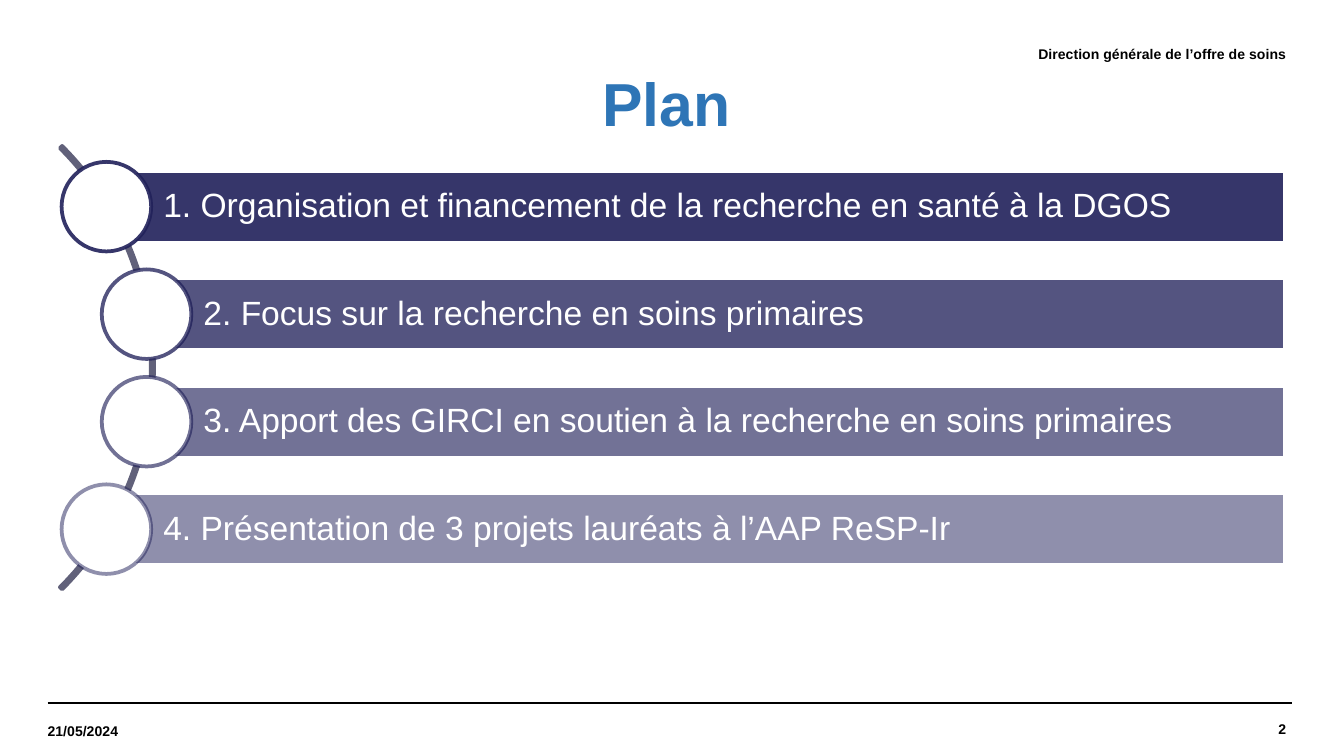
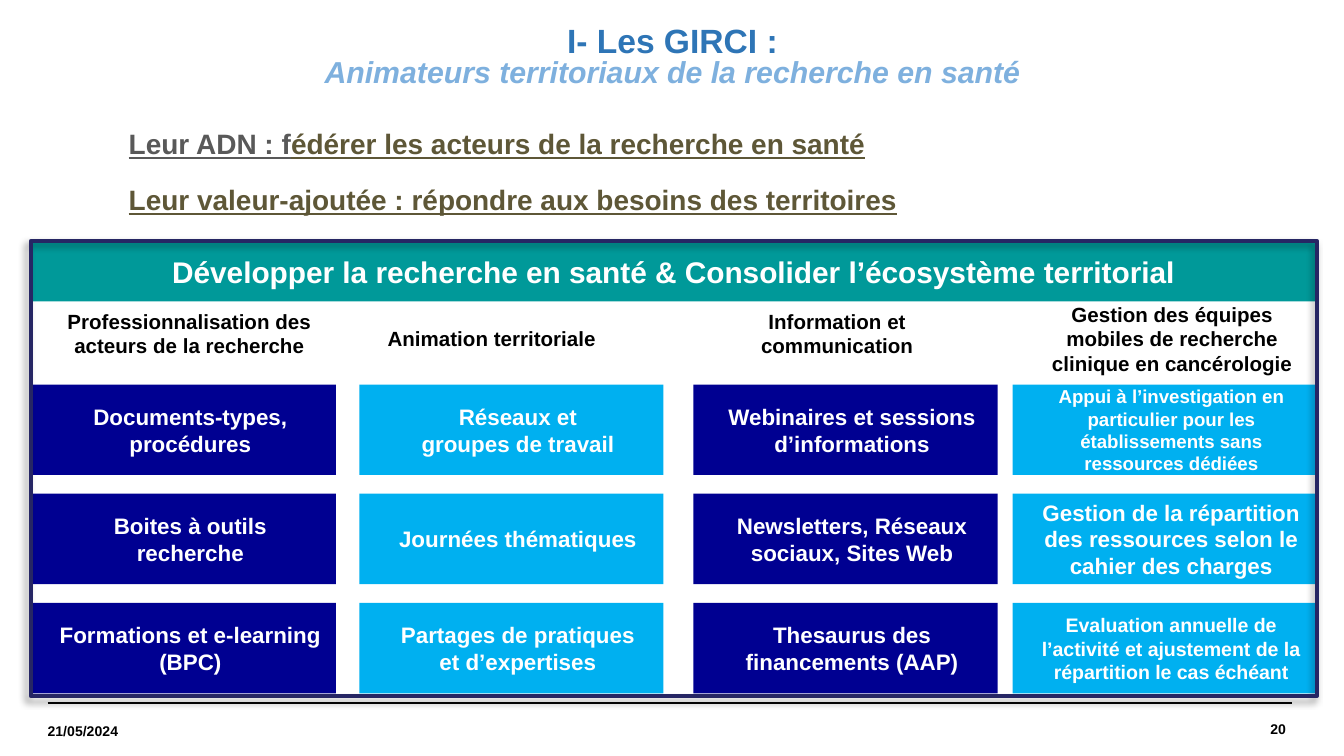
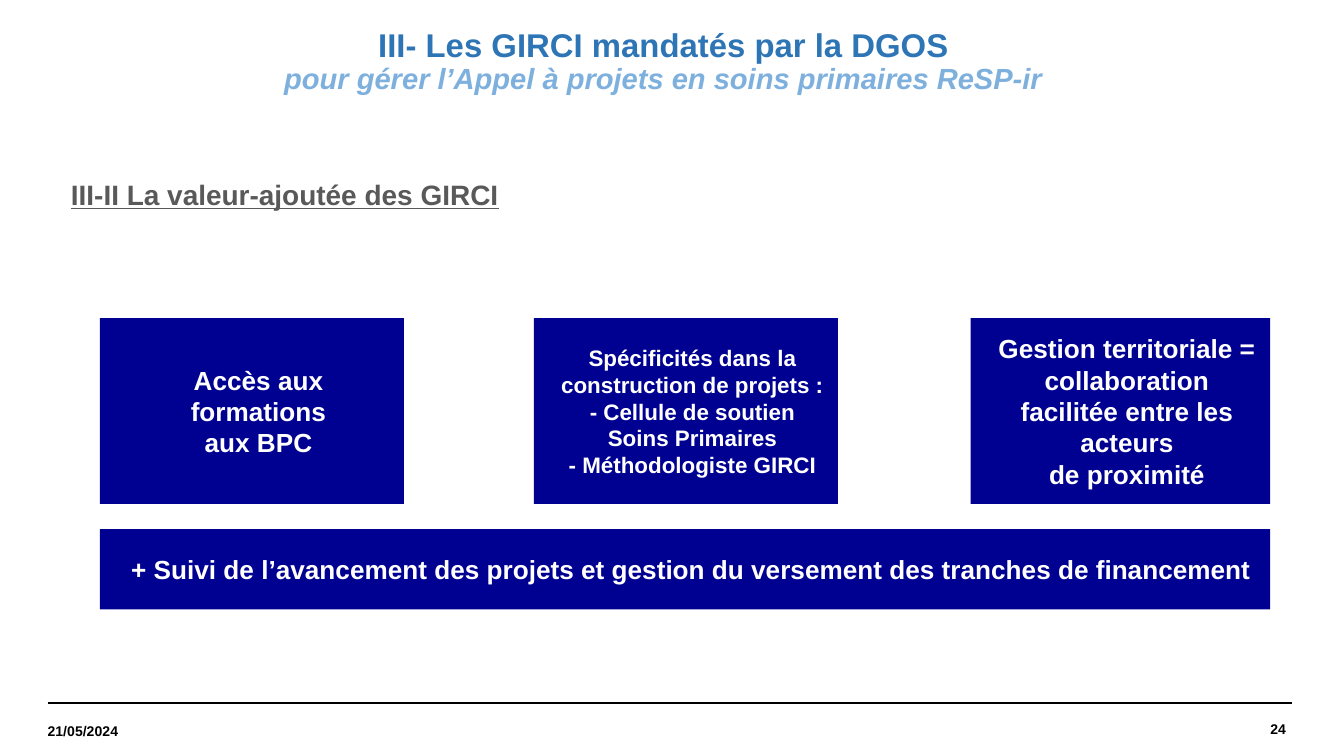
from lxml import etree
from pptx import Presentation
from pptx.dml.color import RGBColor
from pptx.enum.shapes import MSO_CONNECTOR, MSO_SHAPE
from pptx.enum.text import MSO_ANCHOR, MSO_AUTO_SIZE, PP_ALIGN
from pptx.oxml.ns import qn
from pptx.util import Pt

RECT, OVAL, ARC = MSO_SHAPE.RECTANGLE, MSO_SHAPE.OVAL, MSO_SHAPE.BLOCK_ARC
LEFT, MID, RIGHT = PP_ALIGN.LEFT, PP_ALIGN.CENTER, PP_ALIGN.RIGHT
TOP, CENTER = MSO_ANCHOR.TOP, MSO_ANCHOR.MIDDLE
NONE = MSO_AUTO_SIZE.NONE
STRAIGHT = MSO_CONNECTOR.STRAIGHT

# Colours
BLACK, WHITE, GREY, OLIVE = "000000", "FFFFFF", "595959", "5E5737"
BLUE, PALE, NAVY, SKY = "2E75B6", "7EB0DE", "000091", "00B0F0"
INK, SLATE, EDGE, TEAL = "21215A", "61617A", "262664", "009999"

# Shared text styles
HEAD = {"size": 18, "bold": True, "color": BLUE}
SUB = {"bold": True, "italic": True, "color": PALE}
NOTE = {"size": 7.5, "bold": True, "color": BLACK}
LEAD = {"size": 15, "bold": True, "underline": True, "color": GREY}
CELL = {"size": 12, "bold": True, "color": WHITE}
FLAT = {"margin_left": 0, "margin_right": 0, "margin_top": 0, "margin_bottom": 0}
PAD = (7, 0)
HANG = (1, 6)


def tint(fill, code):
    fill.solid()
    fill.fore_color.rgb = RGBColor.from_string(code)


def put(page, kind, at, paras=(), font=None, para=None, frame=None,
        pad=None, fill=None, line=None):
    """Place a title, text box or shape; a paragraph is a list of (text, font changes)."""
    at = [Pt(v) for v in at]
    if kind == "title":
        shape = page.shapes.title
        shape.left, shape.top, shape.width, shape.height = at
    elif kind == "text":
        shape = page.shapes.add_textbox(*at)
    else:
        shape = page.shapes.add_shape(kind, *at)
        shape.shadow.inherit = False
        for part, code in ((shape.fill, fill), (shape.line.fill, line)):
            if code:
                tint(part, code)
            else:
                part.background()
        if line:
            shape.line.width = Pt(2)
    if not paras:
        return shape
    body = shape.text_frame
    look = {"word_wrap": True, "auto_size": NONE, "vertical_anchor": CENTER}
    for key, val in (look | (frame or {})).items():
        setattr(body, key, Pt(val) if key.startswith("margin") else val)
    for n, parts in enumerate(paras):
        p = body.add_paragraph() if n else body.paragraphs[0]
        if pad:
            props = p._p.get_or_add_pPr()
            props.set("marL", str(Pt(pad[0])))
            props.set("indent", str(Pt(pad[1])))
        for key, val in ({"alignment": MID} | (para or {})).items():
            if key != "space_before" or n:
                setattr(p, key, val)
        for text, extra in parts:
            if text.startswith("\n"):
                p.add_line_break()
            run = p.add_run()
            run.text = text.lstrip("\n")
            for key, val in ({"name": "Arial"} | font | extra).items():
                if key == "color":
                    tint(run.font.fill, val)
                else:
                    setattr(run.font, key, Pt(val) if key == "size" else val)
    return shape


deck = Presentation()
deck.slide_width, deck.slide_height = Pt(720), Pt(405)

# Footer rule, date and number on every slide
pages = []
for num in ("2", "20", "24"):
    page = deck.slides.add_slide(deck.slide_layouts[5])
    pages.append(page)
    rule = page.shapes.add_connector(STRAIGHT, Pt(25.5), Pt(376.6), Pt(692), Pt(376.6))
    tint(rule.line.fill, BLACK)
    rule.line.width = Pt(0.8)
    etree.SubElement(rule._element.spPr, qn("a:effectLst"))
    put(page, "text", (582.5, 376.5, 106.5, 28), [[(num, {})]], NOTE,
        {"alignment": RIGHT}, FLAT)
    put(page, "text", (25.5, 378, 92, 27.5), [[("21/05/2024", {})]], NOTE,
        {"alignment": LEFT}, FLAT)
plan, team, gain = pages

# Plan: title and header
put(plan, "title", (25.5, 36, 663, 42.5), [[("Plan", {})]], HEAD | {"size": 32.5},
    {"line_spacing": 0.9})
put(plan, "text", (226, 15, 463, 28), [[("Direction générale de l’offre de soins", {})]],
    NOTE, {"alignment": RIGHT}, FLAT)

# Plan: curve with four steps
curve = put(plan, ARC, (-253.5, 29, 336, 336), line=SLATE)
for n, val in enumerate((189, 27, 0.005)):
    curve.adjustments[n] = val
steps = [
    ("1. Organisation et financement de la recherche en santé à la DGOS", 57, 90),
    ("2. Focus sur la recherche en soins primaires", 78.5, 77),
    ("3. Apport des GIRCI en soutien à la recherche en soins primaires", 78.5, 63),
    ("4. Présentation de 3 projets lauréats à l’AAP ReSP-Ir", 57, 50),
]
for n, (text, left, alpha) in enumerate(steps):
    top = 91.5 + 57.6 * n
    bar = put(plan, RECT, (left, top, 688.5 - left, 38.4), [[(text, {})]],
              {"size": 18, "color": WHITE}, {"alignment": LEFT, "line_spacing": 0.9},
              {"margin_left": 30.5}, fill=INK, line=WHITE)
    dot = put(plan, OVAL, (left - 24, top - 4.8, 48, 48), fill=WHITE, line=INK)
    for shape, route in ((bar, "./a:solidFill/a:srgbClr"), (dot, "./a:ln//a:srgbClr")):
        for clr in shape._element.spPr.xpath(route):
            etree.SubElement(clr, qn("a:alpha"), val=str(alpha * 1000))

# Team: title and two lead lines
put(team, "title", (74, 10, 572.5, 42.5),
    [[("I- Les GIRCI :", {}),
      ("\nAnimateurs territoriaux de la recherche en santé", SUB | {"size": 16.2})]],
    HEAD, {"line_spacing": 0.8})
put(team, "text", (62, 68, 465, 47.5),
    [[("Leur ADN : f", {}),
      ("édérer les acteurs de la recherche en santé", {"color": OLIVE})],
     [("Leur valeur-ajoutée : répondre aux besoins des territoires", {"color": OLIVE})]],
    LEAD, {"alignment": LEFT, "space_before": Pt(4), "space_after": Pt(8)},
    FLAT | {"vertical_anchor": TOP}, HANG)

# Team: banner and four columns of three boxes
put(team, RECT, (16.5, 129, 689, 32.5),
    [[("Développer la recherche en santé & Consolider l’écosystème territorial", {})]],
    CELL | {"size": 16}, fill=TEAL)
cols = [
    (17, 16.5, 151, NAVY, "Professionnalisation des acteurs de la recherche",
     [(["Documents-types, procédures"], 12), (["Boites à outils recherche"], 12),
      (["Formations et e-learning (BPC)"], 12)]),
    (192.5, 178.5, 154, SKY, "Animation territoriale",
     [(["Réseaux et", "groupes de travail"], 12), (["Journées thématiques"], 12),
      (["Partages de pratiques", "et d’expertises"], 12)]),
    (371.5, 363.5, 151, NAVY, "Information et communication",
     [(["Webinaires et sessions d’informations"], 12),
      (["Newsletters, Réseaux sociaux, Sites Web"], 12),
      (["Thesaurus des financements (AAP)"], 12)]),
    (542.5, 543, 154, SKY, "Gestion des équipes mobiles de recherche clinique en cancérologie",
     [(["Appui à l’investigation en particulier pour les établissements sans "
        "ressources dédiées"], 10),
      (["Gestion de la répartition des ressources selon le cahier des charges"], 12),
      (["Evaluation annuelle de l’activité et ajustement de la répartition "
        "le cas échéant"], 10.5)]),
]
for left, start, top, code, name, cells in cols:
    put(team, "text", (start, top, 163, 55), [[(name, {})]],
        CELL | {"size": 11, "color": BLACK}, pad=PAD)
    for n, (lines, size) in enumerate(cells):
        put(team, RECT, (left, 206 + 58.5 * n, 163, 48.5), [[(s, {})] for s in lines],
            CELL | {"size": size}, pad=PAD, fill=code)

# Team: frame with shadow
edge = put(team, RECT, (16.5, 129, 689, 244), line=EDGE)
glow = etree.SubElement(edge._element.spPr.find(qn("a:effectLst")), qn("a:outerShdw"),
                        blurRad=str(Pt(4)), dist=str(Pt(3)), dir=str(135 * 60000))
clr = etree.SubElement(glow, qn("a:srgbClr"), val=BLACK)
etree.SubElement(clr, qn("a:alpha"), val="40000")

# Gain: title and lead line
put(gain, "title", (0, 10, 711, 47),
    [[("III- Les GIRCI mandatés par la DGOS", {}),
      ("\npour gérer l’Appel à projets en soins primaires ReSP-ir", SUB | {"size": 15.6})]],
    HEAD | {"size": 17.6}, {"line_spacing": 0.9})
put(gain, "text", (31, 95, 663, 19.5), [[("III-II La valeur-ajoutée des GIRCI", {})]],
    LEAD, {"alignment": LEFT}, FLAT | {"vertical_anchor": TOP}, HANG)

# Gain: three boxes above a wide one
boxes = [
    ((53.5, 170.5, 163, 99.5), 14, ["Accès aux formations", "aux BPC"]),
    ((286, 170.5, 163, 99.5), 12,
     ["Spécificités dans la construction de projets :",
      "- Cellule de soutien Soins Primaires", "- Méthodologiste GIRCI"]),
    ((520, 170.5, 160.5, 99.5), 14,
     ["Gestion territoriale = collaboration facilitée entre les acteurs",
      "de proximité"]),
    ((53.5, 283.5, 627, 43), 14,
     ["+ Suivi de l’avancement des projets et gestion du versement des tranches "
      "de financement"]),
]
for at, size, lines in boxes:
    put(gain, RECT, at, [[(s, {})] for s in lines], CELL | {"size": size},
        pad=PAD, fill=NAVY)

deck.save("out.pptx")
